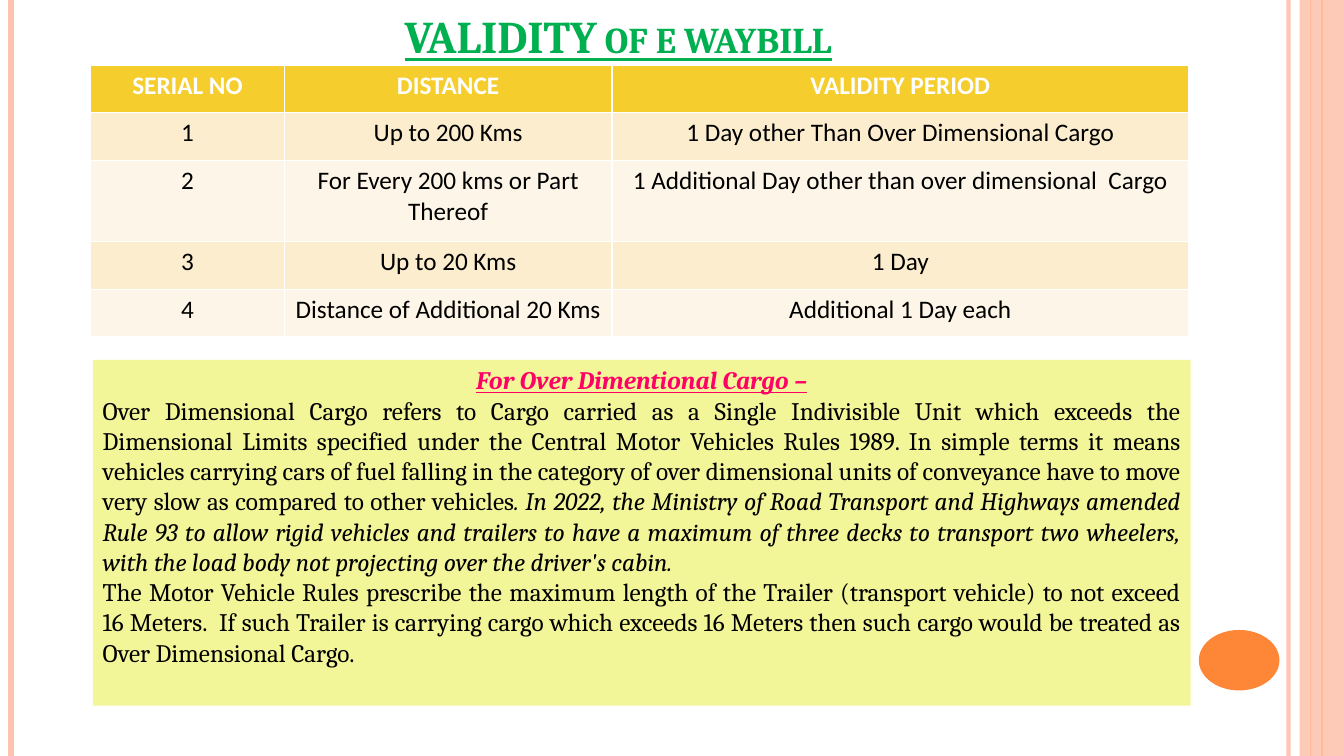
from lxml import etree
from pptx import Presentation
from pptx import util as u
from pptx.dml.color import RGBColor
from pptx.enum import shapes, text
from pptx.oxml.ns import qn

UNIT = u.Inches(0.01)
COLS, ROWS = 1333, 750
ORANGE, PEACH = "FE8637", "FEC3AE"

prs = Presentation()
prs.slide_width, prs.slide_height = COLS * UNIT, ROWS * UNIT
s = prs.slides.add_slide(prs.slide_layouts[6])


def paint(fmt, color, alpha=100):
    fmt.solid()
    fmt.fore_color.rgb = RGBColor.from_string(color)
    if alpha < 100:
        clr = fmt._xPr.find(".//" + qn("a:srgbClr"))
        etree.SubElement(clr, qn("a:alpha"), val=str(alpha * 1000))


def style(font, name, size, color, bold=False, italic=False, underline=False):
    font.name, font.size = name, u.Pt(size)
    font.bold, font.italic, font.underline = bold, italic, underline
    paint(font.fill, color)


stripes = [(1278, PEACH, 3, 93), (11, PEACH, 4.5, 100),
           (1311, ORANGE, 1.5, 100), (1300, ORANGE, 0.75, 100)]
for x, color, width, alpha in stripes:
    c = s.shapes.add_connector(shapes.MSO_CONNECTOR.STRAIGHT,
                               x * UNIT, 0, x * UNIT, ROWS * UNIT)
    c.line.width = u.Pt(width)
    paint(c.line.fill, color, alpha)
    etree.SubElement(c._element.spPr, qn("a:effectLst"))

blocks = [("RECTANGLE", 1289, 0, 44, ROWS, PEACH, 87),
          ("OVAL", 1189, 625, 80, 60, ORANGE, 100),
          ("RECTANGLE", 92, 357, 1089, 343, "F3F599", 100)]
for kind, x, y, w, h, color, alpha in blocks:
    sp = s.shapes.add_shape(shapes.MSO_SHAPE[kind],
                            x * UNIT, y * UNIT, w * UNIT, h * UNIT)
    sp.shadow.inherit = False
    sp.line.fill.background()
    paint(sp.fill, color, alpha)

note = [
    (text.PP_ALIGN.CENTER, [("For Over Dimentional Cargo –", "FF0066", True, True, True)]),
    (text.PP_ALIGN.JUSTIFY, [
        ("Over Dimensional Cargo refers to Cargo carried as a Single Indivisible Unit "
         "which exceeds the Dimensional Limits specified under the Central Motor Vehicles "
         "Rules 1989. In simple terms it means vehicles carrying cars of fuel falling in "
         "the category of over dimensional units of conveyance have to move very slow as "
         "compared to other vehicles", "000000"),
        (". In 2022, the Ministry of Road Transport and Highways amended Rule 93 to allow "
         "rigid vehicles and trailers to have a maximum of three decks to transport two "
         "wheelers, with the load body not projecting over the driver's cabin.",
         "000000", False, True)]),
    (text.PP_ALIGN.JUSTIFY, [
        ("The Motor Vehicle Rules prescribe the maximum length of the Trailer (transport "
         "vehicle) to not exceed 16 Meters.  If such Trailer is carrying cargo which "
         "exceeds 16 Meters then such cargo would be treated as Over Dimensional Cargo.",
         "000000")]),
]
tf = sp.text_frame
tf.word_wrap = True
tf.vertical_anchor = text.MSO_ANCHOR.TOP
for i, (align, runs) in enumerate(note):
    p = tf.add_paragraph() if i else tf.paragraphs[0]
    p.alignment = align
    for words, *look in runs:
        r = p.add_run()
        r.text = words
        style(r.font, "Cambria", 18, *look)

title = s.shapes.add_textbox(92 * UNIT, 0, 1042 * UNIT, 67 * UNIT)
tf = title.text_frame
tf.word_wrap = True
tf.vertical_anchor = text.MSO_ANCHOR.BOTTOM
p = tf.paragraphs[0]
p.alignment = text.PP_ALIGN.CENTER
r = p.add_run()
r.text = "VALIDITY of e waybill"
style(r.font, "Cambria", 32.4, "00B050", bold=True, underline=True)
r.font._element.set("cap", "small")

rows = [
    ("SERIAL NO", "DISTANCE", "VALIDITY PERIOD"),
    ("1", "Up to 200 Kms", "1 Day other Than Over Dimensional Cargo"),
    ("2", "For Every 200 kms or Part Thereof",
     "1 Additional Day other than over dimensional  Cargo"),
    ("3", "Up to 20 Kms", "1 Day"),
    ("4", "Distance of Additional 20 Kms", "Additional 1 Day each"),
]
widths, heights = (192, 325, 572), (47, 47, 81, 47, 47)
tbl = s.shapes.add_table(len(rows), len(widths), 90 * UNIT, 65 * UNIT,
                         sum(widths) * UNIT, sum(heights) * UNIT).table
for col, w in zip(tbl.columns, widths):
    col.width = w * UNIT
for i, (row, h) in enumerate(zip(rows, heights)):
    tbl.rows[i].height = h * UNIT
    fill = "F5CD2D" if i == 0 else "FBEDCD" if i % 2 else "FDF6E8"
    for j, words in enumerate(row):
        cell = tbl.cell(i, j)
        paint(cell.fill, fill)
        cell.text = words
        p = cell.text_frame.paragraphs[0]
        p.alignment = text.PP_ALIGN.CENTER
        style(p.font, "Calibri", 18, "000000" if i else "FFFFFF", bold=i == 0)

prs.save("out.pptx")
